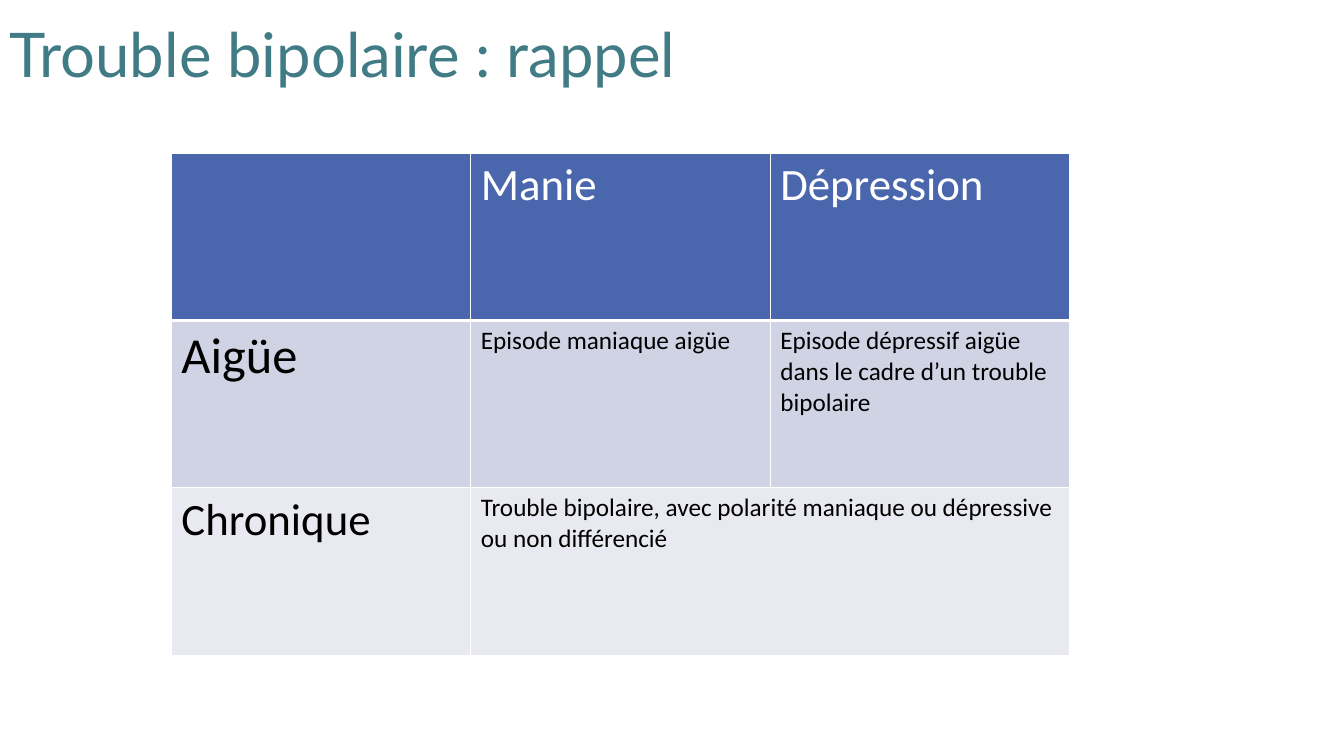
from lxml.etree import SubElement
from pptx import Presentation
from pptx.dml.color import RGBColor
from pptx.enum.text import MSO_ANCHOR
from pptx.oxml.ns import qn
from pptx.util import Inches, Pt

TITLE = "Trouble bipolaire : rappel"
ROWS = [
    ("head", "white", [("", 32), ("Manie", 32), ("Dépression", 32)]),
    ("dark", "black", [
        ("Aigüe", 36),
        ("Episode maniaque aigüe", 18),
        ("Episode dépressif aigüe dans le cadre d’un trouble bipolaire", 18),
    ]),
    ("light", "black", [
        ("Chronique", 32),
        ("Trouble bipolaire, avec polarité maniaque ou dépressive ou non différencié", 18),
        ("", 18),
    ]),
]
COLORS = {
    "title": "417B85",
    "head": "4A66AC",
    "dark": "D0D3E3",
    "light": "E9EAF1",
    "white": "FFFFFF",
    "black": "000000",
}
COL, ROW = 2.97, 1.66


def color(name):
    """Return the named colour."""
    return RGBColor.from_string(COLORS[name])


def write(frame, text, size, ink, font="Calibri", space=1.0):
    """Put formatted text in a frame."""
    frame.word_wrap = True
    par = frame.paragraphs[0]
    par.line_spacing = space
    par.font.size = Pt(size)
    if text:
        run = par.add_run()
        run.text = text
        run.font.size = Pt(size)
        run.font.name = font
        run.font.bold = False
        run.font.color.rgb = color(ink)


def edge(cell, side, width):
    """Draw one white border of a cell."""
    props = cell._tc.get_or_add_tcPr()
    line = SubElement(props, qn(f"a:ln{side}"), w=str(Pt(width)))
    fill = SubElement(line, qn("a:solidFill"))
    SubElement(fill, qn("a:srgbClr"), val=COLORS["white"])


def main():
    """Build the slide."""
    deck = Presentation()
    deck.slide_width, deck.slide_height = Inches(13.33), Inches(7.5)
    slide = deck.slides.add_slide(deck.slide_layouts[6])

    box = slide.shapes.add_textbox(0, Inches(0.02), Inches(10.98), Inches(1.11))
    box.text_frame.vertical_anchor = MSO_ANCHOR.MIDDLE
    write(box.text_frame, TITLE, 44, "title", font="Lato", space=0.9)

    count = len(ROWS)
    table = slide.shapes.add_table(
        count, 3, Inches(1.7), Inches(1.52), Inches(3 * COL), Inches(count * ROW)
    ).table
    for col in table.columns:
        col.width = Inches(COL)
    for r, (fill, ink, texts) in enumerate(ROWS):
        table.rows[r].height = Inches(ROW)
        for c, (text, size) in enumerate(texts):
            cell = table.cell(r, c)
            for side in "LRTB":
                edge(cell, side, 3 if r == 0 and side == "B" else 1)
            cell.fill.solid()
            cell.fill.fore_color.rgb = color(fill)
            write(cell.text_frame, text, size, ink)
    table.cell(2, 1).merge(table.cell(2, 2))

    deck.save("out.pptx")


if __name__ == "__main__":
    main()
